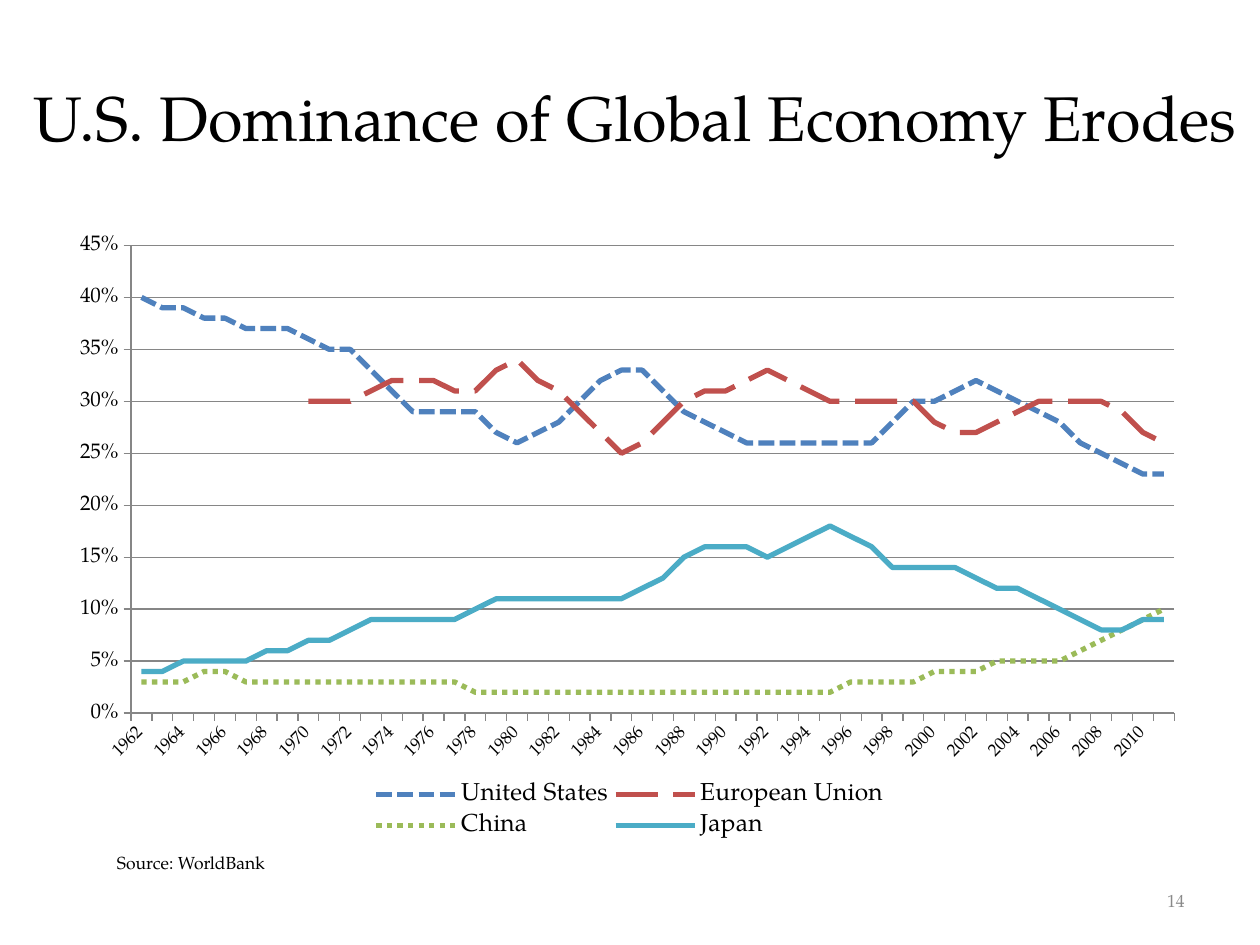
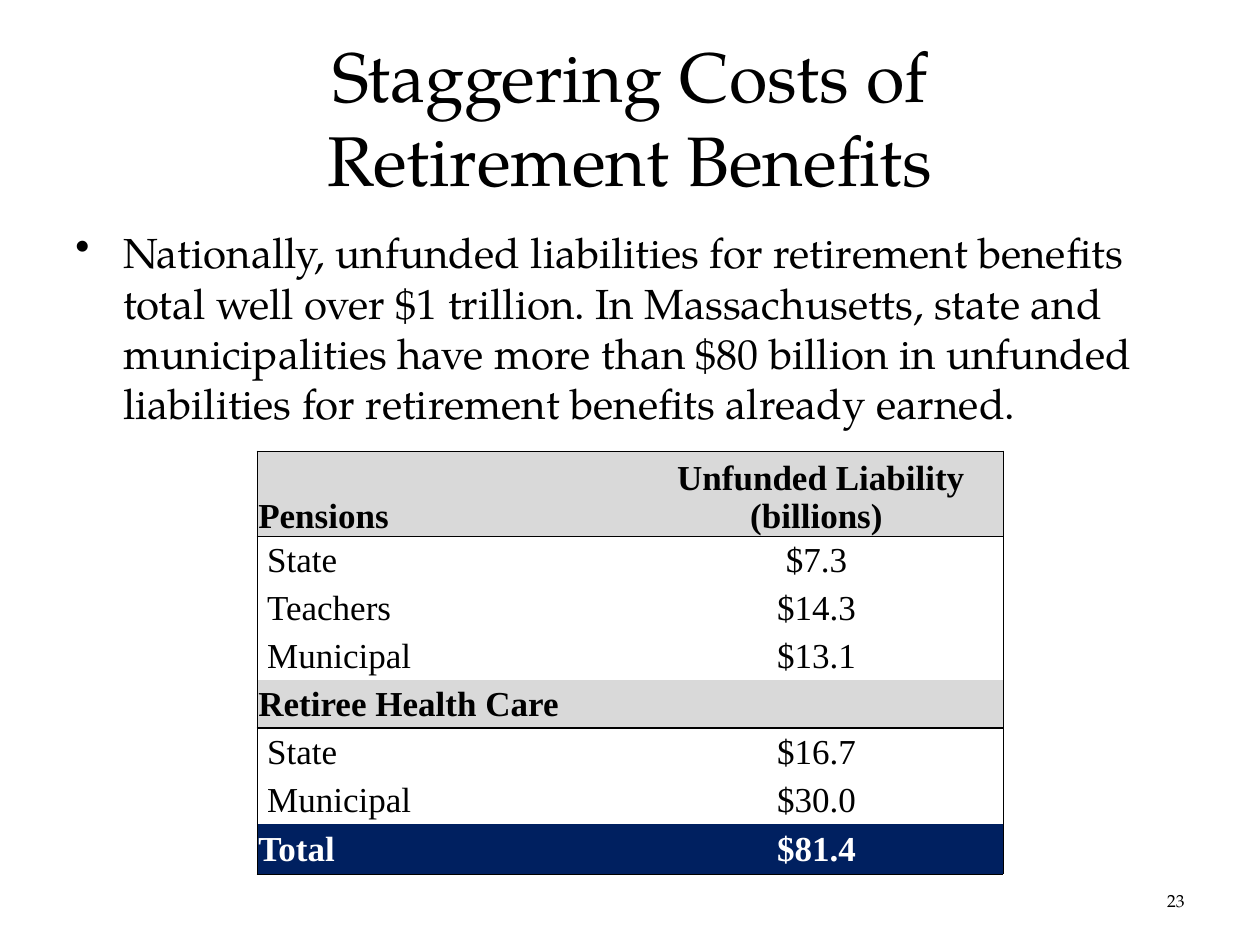
from dataclasses import dataclass, replace
from typing import NamedTuple

from lxml import etree
from pptx import Presentation
from pptx.chart.data import CategoryChartData
from pptx.dml.color import RGBColor
from pptx.enum.chart import XL_CHART_TYPE, XL_LEGEND_POSITION, XL_TICK_MARK
from pptx.enum.dml import MSO_LINE
from pptx.enum.text import MSO_ANCHOR, PP_ALIGN
from pptx.oxml.ns import qn
from pptx.util import Inches, Pt

LEFT, CENTER, RIGHT = PP_ALIGN.LEFT, PP_ALIGN.CENTER, PP_ALIGN.RIGHT
TOP, MIDDLE, BOTTOM = MSO_ANCHOR.TOP, MSO_ANCHOR.MIDDLE, MSO_ANCHOR.BOTTOM
LINE_CHART = XL_CHART_TYPE.LINE
LEGEND_BOTTOM = XL_LEGEND_POSITION.BOTTOM
TICK_OUTSIDE = XL_TICK_MARK.OUTSIDE
SOLID, LONG_DASH = MSO_LINE.SOLID, MSO_LINE.LONG_DASH
SHORT_DASH, DOTS = MSO_LINE.SQUARE_DOT, MSO_LINE.ROUND_DOT

BLACK = RGBColor(0x00, 0x00, 0x00)
WHITE = RGBColor(0xFF, 0xFF, 0xFF)
NUMBER_GREY = RGBColor(0x89, 0x89, 0x89)
GRID_GREY = RGBColor(0x86, 0x86, 0x86)
HEADING_GREY = RGBColor(0xD9, 0xD9, 0xD9)
NAVY = RGBColor(0x00, 0x20, 0x60)
BLUE = RGBColor(0x4F, 0x81, 0xBD)
RED = RGBColor(0xC0, 0x50, 0x4D)
GREEN = RGBColor(0x9B, 0xBB, 0x59)
TEAL = RGBColor(0x4B, 0xAC, 0xC6)

SERIF = "TeX Gyre Pagella"
TABLE_FONT = "Times New Roman"
PLAIN_TABLE_STYLE = "{2D5ABB26-0587-4C30-8999-92F81FD0307C}"
BLANK_LAYOUT = 6

SLIDE_WIDTH, SLIDE_HEIGHT = Inches(10), Inches(7.5)
COLUMN, ROW = SLIDE_WIDTH / 100, SLIDE_HEIGHT / 75


class Area(NamedTuple):
    """A place on the grid of 100 columns and 75 rows."""
    column: float
    row: float
    columns: float
    rows: float

    def lengths(self) -> tuple:
        return (round(self.column * COLUMN), round(self.row * ROW),
                round(self.columns * COLUMN), round(self.rows * ROW))


@dataclass(frozen=True)
class TextStyle:
    size: float
    color: RGBColor = BLACK
    align: PP_ALIGN = LEFT
    anchor: MSO_ANCHOR = TOP
    font: str = SERIF
    bold: bool = False


class Trend(NamedTuple):
    name: str
    color: RGBColor
    dash: MSO_LINE
    percents: tuple


class LiabilityRow(NamedTuple):
    label: str
    amount: tuple = ()
    rows: float = 3.8
    fill: RGBColor | None = None
    color: RGBColor = BLACK
    rule: float = 0
    anchor: MSO_ANCHOR = MIDDLE


TITLE_AREA = Area(5, 3, 90, 12.5)
WIDE_TITLE_AREA = Area(0.8, 3, 99.2, 12.5)
BODY_AREA = Area(5, 17.5, 90, 49.5)
SOURCE_AREA = Area(8.3, 67.1, 85, 2.7)
NUMBER_AREA = Area(71.7, 69.5, 23.3, 4)
TABLE_AREA = Area(20.4, 35.8, 59.2, 33.3)

TITLE = TextStyle(40, align=CENTER, anchor=MIDDLE)
BODY = TextStyle(24)
SOURCE = TextStyle(10)
NUMBER = TextStyle(10, align=RIGHT, anchor=MIDDLE)
CELL = TextStyle(20, font=TABLE_FONT)

FIRST_YEAR, LAST_YEAR = 1962, 2011
TRENDS = (
    Trend("United States", BLUE, SHORT_DASH, (
        40, 39, 39, 38, 38, 37, 37, 37, 36, 35, 35, 33, 31, 29, 29, 29, 29,
        27, 26, 27, 28, 30, 32, 33, 33, 31, 29, 28, 27, 26, 26, 26, 26, 26,
        26, 26, 28, 30, 30, 31, 32, 31, 30, 29, 28, 26, 25, 24, 23, 23)),
    Trend("European Union", RED, LONG_DASH, (None,) * 8 + (
        30, 30, 30, 31, 32, 32, 32, 31, 31, 33, 34, 32, 31, 29, 27, 25, 26,
        28, 30, 31, 31, 32, 33, 32, 31, 30, 30, 30, 30, 30, 28, 27, 27, 28,
        29, 30, 30, 30, 30, 29, 27, 26)),
    Trend("China", GREEN, DOTS, (
        3, 3, 3, 4, 4) + (3,) * 11 + (2,) * 18 + (
        3, 3, 3, 3, 4, 4, 4, 5, 5, 5, 5, 6, 7, 8, 9, 10)),
    Trend("Japan", TEAL, SOLID, (
        4, 4, 5, 5, 5, 5, 6, 6, 7, 7, 8, 9, 9, 9, 9, 9, 10, 11, 11, 11, 11,
        11, 11, 11, 12, 13, 15, 16, 16, 16, 15, 16, 17, 18, 17, 16, 14, 14,
        14, 14, 13, 12, 12, 11, 10, 9, 8, 8, 9, 9)),
)

LIABILITIES = (
    LiabilityRow("Pensions", (" Unfunded Liability", "(billions)"), 6.7,
                 HEADING_GREY, rule=1, anchor=BOTTOM),
    LiabilityRow("State", ("$7.3",)),
    LiabilityRow("Teachers", ("$14.3",)),
    LiabilityRow("Municipal", ("$13.1",)),
    LiabilityRow("Retiree Health Care", fill=HEADING_GREY, rule=1),
    LiabilityRow("State", ("$16.7",)),
    LiabilityRow("Municipal", ("$30.0",)),
    LiabilityRow("Total", ("$81.4",), 4, NAVY, WHITE, rule=0.5),
)


def set_all(target, values: dict) -> None:
    for name, value in values.items():
        setattr(target, name, value)


def add_element(parent, tag: str, **attributes: str):
    return etree.SubElement(parent, qn(tag), attributes)


def set_font(font, size: float, color: RGBColor = BLACK,
             name: str = SERIF, bold: bool = False) -> None:
    set_all(font, {"size": Pt(size), "name": name, "bold": bold})
    font.color.rgb = color


def write_paragraphs(text_frame, texts: tuple, style: TextStyle) -> None:
    """Write one paragraph per text; a newline becomes a line break."""
    for index, text in enumerate(texts):
        para = text_frame.add_paragraph() if index else text_frame.paragraphs[0]
        para.alignment = style.align
        for number, line in enumerate(text.split("\n")):
            if number:
                para.add_line_break()
            span = para.add_run()
            span.text = line
            set_font(span.font, style.size, style.color, style.font, style.bold)


def add_text(page, area: Area, text: str, style: TextStyle):
    box = page.shapes.add_textbox(*area.lengths())
    set_all(box.text_frame, {"word_wrap": True, "vertical_anchor": style.anchor})
    write_paragraphs(box.text_frame, (text,), style)
    return box


def set_indent(para, left: float, first: float) -> None:
    properties = para._p.get_or_add_pPr()
    properties.set("marL", str(Inches(left)))
    properties.set("indent", str(Inches(first)))


def add_page(deck, title: str, number: int, title_area: Area = TITLE_AREA,
             title_size: float = 40, number_color: RGBColor = BLACK):
    page = deck.slides.add_slide(deck.slide_layouts[BLANK_LAYOUT])
    add_text(page, title_area, title, replace(TITLE, size=title_size))
    add_text(page, NUMBER_AREA, str(number), replace(NUMBER, color=number_color))
    return page


def place_in_chart(parent, index: int, inner: bool, **shares: float) -> None:
    """Fix a chart part at x, y, w, h, given as shares of the chart."""
    for old in parent.findall(qn("c:layout")):
        parent.remove(old)
    layout = etree.Element(qn("c:layout"))
    manual = add_element(layout, "c:manualLayout")
    if inner:
        add_element(manual, "c:layoutTarget", val="inner")
    for mode in ("xMode", "yMode"):
        add_element(manual, f"c:{mode}", val="edge")
    for name, share in shares.items():
        add_element(manual, f"c:{name}", val=str(share))
    parent.insert(index, layout)


def style_axis(axis, size: float) -> None:
    set_all(axis, {"major_tick_mark": TICK_OUTSIDE, "has_title": False})
    set_font(axis.tick_labels.font, size)
    axis.format.line.color.rgb = GRID_GREY


def add_trend_chart(page) -> None:
    data = CategoryChartData(number_format="0%")
    data.categories = [str(year) for year in range(FIRST_YEAR, LAST_YEAR + 1)]
    for trend in TRENDS:
        data.add_series(trend.name, [None if percent is None else percent / 100
                                     for percent in trend.percents])
    chart = page.shapes.add_chart(LINE_CHART, *BODY_AREA.lengths(), data).chart
    set_font(chart.font, 10)
    set_all(chart, {"has_title": False, "has_legend": True})
    chart.plots[0].vary_by_categories = False

    for series, trend in zip(chart.plots[0].series, TRENDS):
        series.smooth = False
        series.format.line.color.rgb = trend.color
        set_all(series.format.line, {"width": Pt(3), "dash_style": trend.dash})

    years, shares = chart.category_axis, chart.value_axis
    style_axis(years, 10)
    style_axis(shares, 12)
    set_all(shares, {"minimum_scale": 0, "maximum_scale": 0.45,
                     "major_unit": 0.05, "has_major_gridlines": True})
    shares.major_gridlines.format.line.color.rgb = GRID_GREY
    set_all(shares.tick_labels, {"number_format": "0%",
                                 "number_format_is_linked": False})
    axis_xml = years._element
    axis_xml.find(f"{qn('c:txPr')}/{qn('a:bodyPr')}").set("rot", "-2700000")
    skip = etree.Element(qn("c:tickLblSkip"), {"val": "2"})
    axis_xml.find(qn("c:noMultiLvlLbl")).addprevious(skip)

    legend = chart.legend
    set_all(legend, {"position": LEGEND_BOTTOM, "include_in_layout": False})
    set_font(legend.font, 14)
    place_in_chart(axis_xml.getparent(), 0, True, x=0.06, y=0.04, w=0.92, h=0.75)
    place_in_chart(legend._element, 1, False, x=0.27, y=0.89, w=0.46, h=0.11)


def add_border(cell, side: str, width: float) -> None:
    line = add_element(cell._tc.get_or_add_tcPr(), f"a:ln{side}",
                       w=str(Pt(width)))
    fill = add_element(line, "a:solidFill")
    add_element(fill, "a:srgbClr", val=str(BLACK))


def style_cell(cell, row: LiabilityRow, borders: dict) -> None:
    set_all(cell, {"margin_left": Inches(0.01), "margin_right": Inches(0.01),
                   "margin_top": Inches(0.01), "margin_bottom": 0,
                   "vertical_anchor": row.anchor})
    for side, width in borders.items():
        if width:
            add_border(cell, side, width)
    if row.fill is None:
        cell.fill.background()
    else:
        cell.fill.solid()
        cell.fill.fore_color.rgb = row.fill


def add_liability_table(page) -> None:
    table = page.shapes.add_table(len(LIABILITIES), 2,
                                  *TABLE_AREA.lengths()).table
    set_all(table, {"first_row": False, "horz_banding": False})
    table._tbl.tblPr.find(qn("a:tableStyleId")).text = PLAIN_TABLE_STYLE
    for index, row in enumerate(LIABILITIES):
        table.rows[index].height = round(row.rows * ROW)
        label, amount = table.cell(index, 0), table.cell(index, 1)
        if not row.amount:
            label.merge(amount)
        top = 0 if index else 0.5
        label_right = 0 if row.amount else 0.5
        style_cell(label, row, {"L": 0.5, "R": label_right, "T": top, "B": row.rule})
        style_cell(amount, row, {"R": 0.5, "T": top, "B": row.rule})

        style = replace(CELL, color=row.color, bold=row.fill is not None)
        write_paragraphs(label.text_frame, (row.label,), style)
        write_paragraphs(amount.text_frame, row.amount,
                         replace(style, align=CENTER))
        if row.fill is None:
            set_indent(label.text_frame.paragraphs[0], 0, 0.07)


def build_economy_page(deck) -> None:
    page = add_page(deck, "U.S. Dominance of Global Economy Erodes", 14,
                    WIDE_TITLE_AREA, 36, NUMBER_GREY)
    add_trend_chart(page)
    add_text(page, SOURCE_AREA, "Source: WorldBank", SOURCE)


def build_retirement_page(deck) -> None:
    page = add_page(deck, "Staggering Costs of\nRetirement Benefits", 23)
    body = add_text(
        page, BODY_AREA,
        "Nationally, unfunded liabilities for retirement benefits total well "
        "over $1 trillion. In Massachusetts, state and municipalities have "
        "more than $80 billion in unfunded liabilities for retirement "
        "benefits already earned.", BODY)
    para = body.text_frame.paragraphs[0]
    para.space_before = Pt(4.8)
    set_indent(para, 0.38, -0.38)
    add_element(para._p.get_or_add_pPr(), "a:buChar", char="•")
    add_liability_table(page)


def main() -> None:
    deck = Presentation()
    set_all(deck, {"slide_width": SLIDE_WIDTH, "slide_height": SLIDE_HEIGHT})
    build_economy_page(deck)
    build_retirement_page(deck)
    deck.save("out.pptx")


if __name__ == "__main__":
    main()
